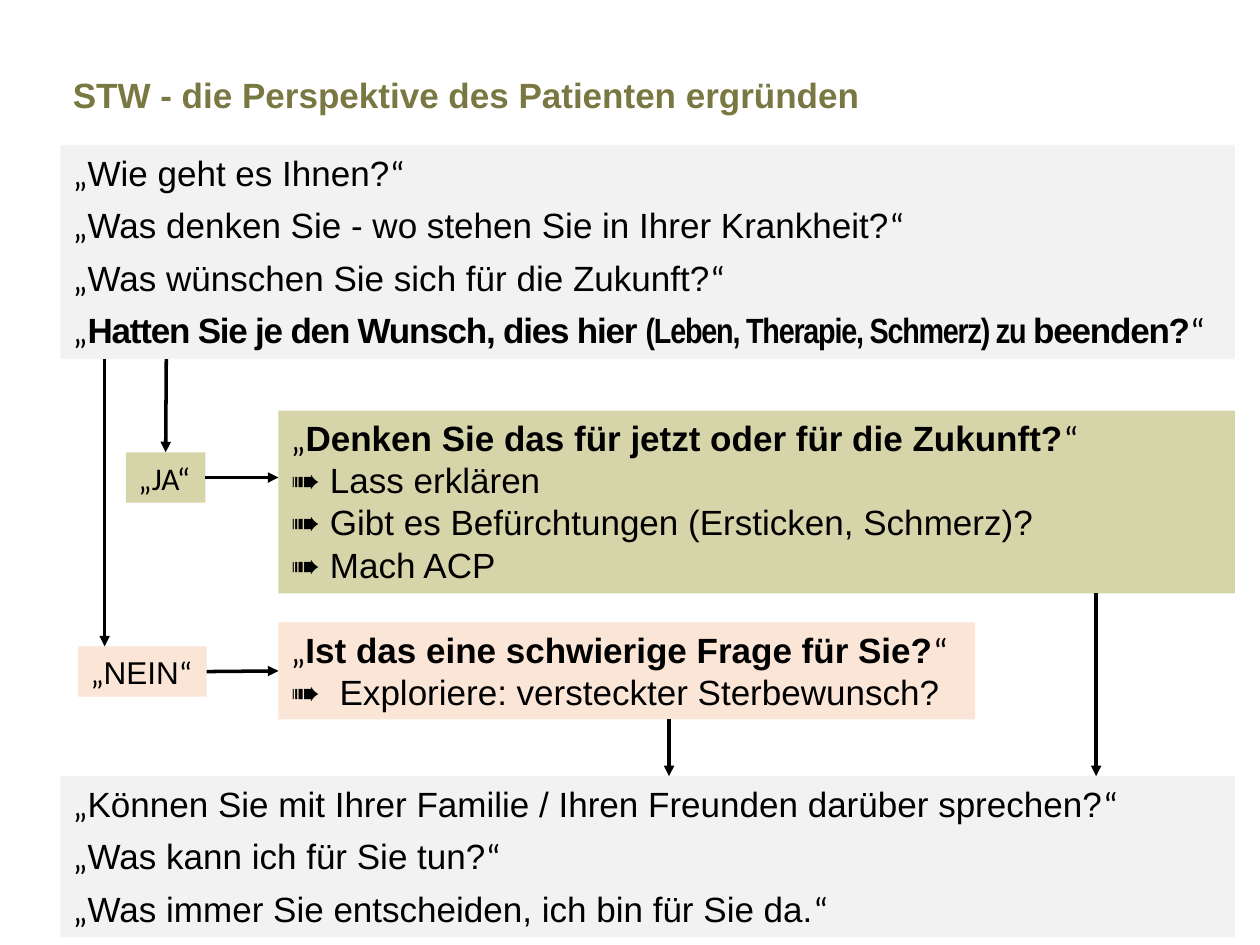
from pptx import Presentation
from pptx.dml.color import RGBColor
from pptx.enum.shapes import MSO_CONNECTOR as CONN, MSO_SHAPE as SHAPE
from pptx.enum.text import MSO_ANCHOR as ANCHOR, MSO_AUTO_SIZE as AUTO, PP_ALIGN as ALIGN
from pptx.oxml.ns import qn
from pptx.util import Inches, Pt
from lxml import etree

GREY, OLIVE, PEACH, BLACK = "F2F2F2", "D6D5A9", "FBE5D6", "000000"
TITLE_COLOR = "797842"
BODY = {"name": "Arial", "size": Pt(20), "bold": False}
BOLD = {**BODY, "bold": True}
SMALL = {**BODY, "size": Pt(18)}
LEFT, RIGHT, ANSWER_LEFT = 0.48, 9.8, 2.21
TOP_END, FINAL_TOP = 2.85, 6.16


def rgb(value):
    """Turn a hex string into a colour."""
    return RGBColor.from_string(value)


def set_attrs(obj, values):
    """Set every attribute named in a dict."""
    for name, value in values.items():
        setattr(obj, name, value)


def add_run(p, text, fmt, color=BLACK, spacing=0):
    """Add one formatted run to a paragraph."""
    r = p.add_run()
    r.text = text
    set_attrs(r.font, fmt)
    r.font.color.rgb = rgb(color)
    if spacing:
        r._r.get_or_add_rPr().set("spc", str(round(spacing * 100)))


def add_quote(p, parts, size=Pt(20)):
    """Write runs of (text, format, spacing) between German quotation marks."""
    mark = {"name": "Calibri", "size": size, "bold": False}
    add_run(p, "„", mark)
    for text, fmt, spacing in parts:
        add_run(p, text, fmt, spacing=spacing)
    add_run(p, "“", mark)


def add_paragraph(tf, first, space_after=0):
    """Return the first or a new left-aligned paragraph."""
    p = tf.paragraphs[0] if first else tf.add_paragraph()
    set_attrs(p, {"alignment": ALIGN.LEFT, "space_after": Pt(space_after)})
    return p


def add_box(s, left, top, width, height, fill, wrap=True):
    """Add a plain filled rectangle ready for text."""
    sp = s.shapes.add_shape(SHAPE.RECTANGLE, *map(Inches, (left, top, width, height)))
    sp.shadow.inherit = False
    sp.fill.solid()
    sp.fill.fore_color.rgb = rgb(fill)
    sp.line.fill.background()
    set_attrs(sp.text_frame, {"word_wrap": wrap, "vertical_anchor": ANCHOR.TOP,
                              "auto_size": AUTO.SHAPE_TO_FIT_TEXT})
    return sp


def add_question_box(s, top, height, questions):
    """Add a full-width grey box with one quoted question per paragraph."""
    sp = add_box(s, LEFT, top, RIGHT - LEFT, height, GREY)
    for i, parts in enumerate(questions):
        add_quote(add_paragraph(sp.text_frame, i == 0, 6), parts)
    return sp


def add_follow_up(s, top, width, height, fill, question, steps, wrap):
    """Add a box with a bold question and the steps that follow it."""
    sp = add_box(s, ANSWER_LEFT, top, width, height, fill, wrap)
    add_quote(add_paragraph(sp.text_frame, True), [(question, BOLD, 0)])
    p = add_paragraph(sp.text_frame, False)
    for i, step in enumerate(steps):
        if i:
            p.add_line_break()
        add_run(p, step, BODY)
    return sp


def add_answer(s, left, top, width, fill, text, fmt):
    """Add a small box with a quoted answer."""
    sp = add_box(s, left, top, width, 0.4, fill, wrap=False)
    add_quote(add_paragraph(sp.text_frame, True), [(text, fmt, 0)], Pt(18))
    return sp


def add_arrow(s, x1, y1, x2, y2, begin=None, end=None):
    """Add a black arrow, joined to (shape, site) pairs where given."""
    c = s.shapes.add_connector(CONN.STRAIGHT, *map(Inches, (x1, y1, x2, y2)))
    if begin:
        c.begin_connect(*begin)
    if end:
        c.end_connect(*end)
    c.line.width = Pt(2)
    c.line.color.rgb = rgb(BLACK)
    etree.SubElement(c.line._get_or_add_ln(), qn("a:tailEnd"), type="triangle")
    etree.SubElement(c._element.spPr, qn("a:effectLst"))


def add_title(s, text):
    """Add the slide title."""
    tf = s.shapes.add_textbox(*map(Inches, (LEFT, 0.41, 7.94, 0.72))).text_frame
    set_attrs(tf, {"word_wrap": True, "vertical_anchor": ANCHOR.MIDDLE})
    p = add_paragraph(tf, True)
    p.line_spacing = 0.9
    add_run(p, text, BOLD, TITLE_COLOR)


def main():
    """Build the slide and save it."""
    prs = Presentation()
    set_attrs(prs, {"slide_width": Inches(10), "slide_height": Inches(7.5)})
    s = prs.slides.add_slide(prs.slide_layouts[6])
    add_title(s, "STW - die Perspektive des Patienten ergründen")

    opening = ["Wie geht es Ihnen?", "Was denken Sie - wo stehen Sie in Ihrer Krankheit?",
               "Was wünschen Sie sich für die Zukunft?"]
    key_question = [("Hatten Sie je den Wunsch, dies hier ", BOLD, -0.7),
                    ("(Leben, Therapie, Schmerz) zu ", {**BOLD, "name": "Arial Narrow"}, -0.7),
                    ("beenden?", BOLD, -0.7)]
    closing = ["Können Sie mit Ihrer Familie / Ihren Freunden darüber sprechen?",
               "Was kann ich für Sie tun?", "Was immer Sie entscheiden, ich bin für Sie da."]
    add_question_box(s, 1.15, 1.7, [[(q, BODY, 0)] for q in opening] + [key_question])
    add_question_box(s, FINAL_TOP, 1.28, [[(q, BODY, 0)] for q in closing])

    yes = add_answer(s, 1, 3.59, 0.63, OLIVE, "JA", {**SMALL, "name": "Calibri"})
    add_follow_up(s, 3.26, RIGHT - ANSWER_LEFT, 1.45, OLIVE,
                  "Denken Sie das für jetzt oder für die Zukunft?",
                  ["➠ Lass erklären", "➠ Gibt es Befürchtungen (Ersticken, Schmerz)?",
                   "➠ Mach ACP"], wrap=True)
    no = add_answer(s, 0.62, 5.13, 1.02, PEACH, "NEIN", SMALL)
    explore = add_follow_up(s, 4.94, 5.53, 0.77, PEACH, "Ist das eine schwierige Frage für Sie?",
                            ["➠  Exploriere: versteckter Sterbewunsch?"], wrap=False)

    add_arrow(s, 1.32, TOP_END, 1.32, 3.59, end=(yes, 0))
    add_arrow(s, 0.83, TOP_END, 0.83, 5.13)
    add_arrow(s, 1.63, 3.79, ANSWER_LEFT, 3.79, begin=(yes, 3))
    add_arrow(s, 1.63, 5.33, ANSWER_LEFT, 5.33, begin=(no, 3), end=(explore, 1))
    add_arrow(s, 5.31, 5.71, 5.31, FINAL_TOP)
    add_arrow(s, 8.7, 4.71, 8.7, FINAL_TOP)
    prs.save("out.pptx")


if __name__ == "__main__":
    main()
